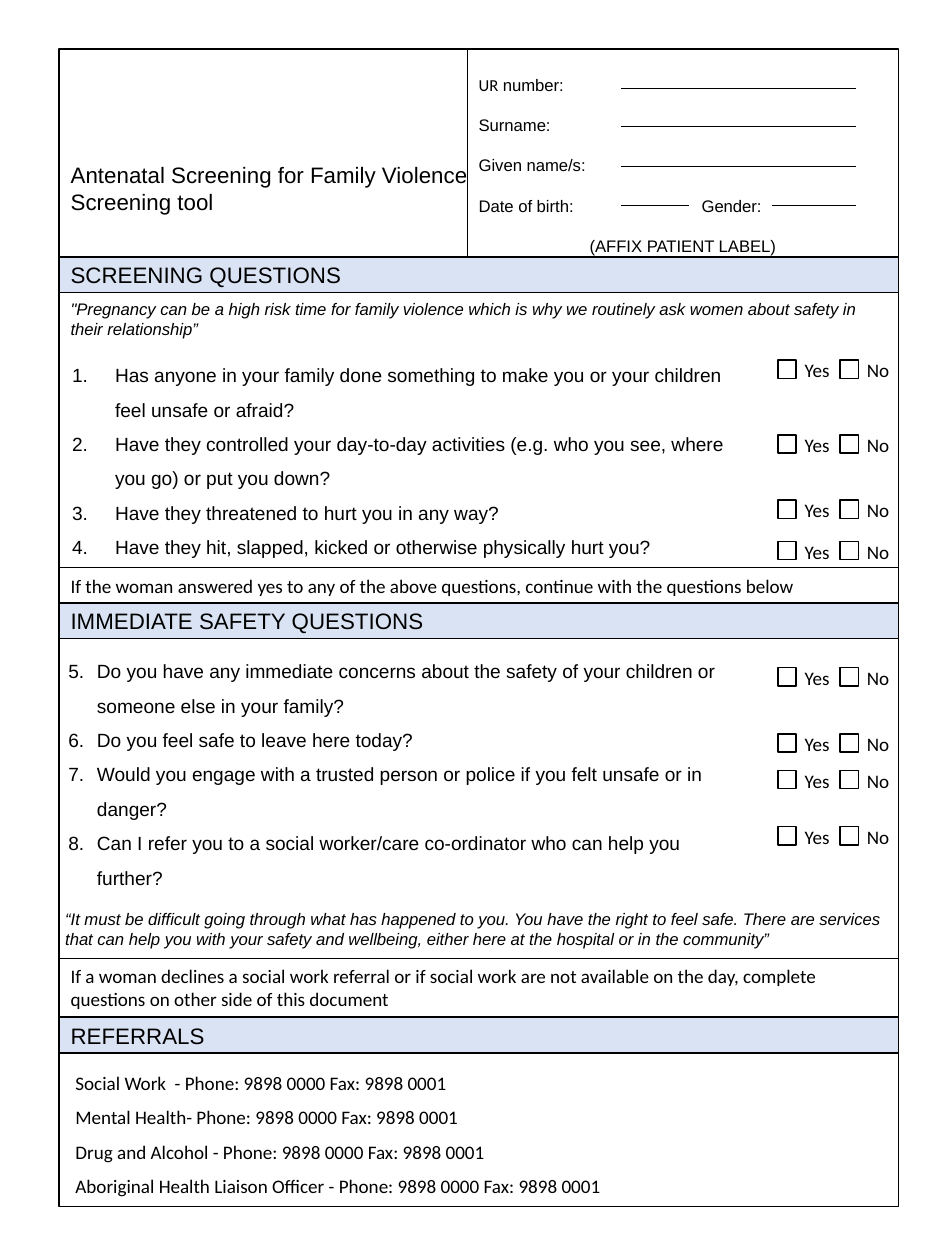
from lxml.etree import SubElement
from pptx import Presentation
from pptx.dml.color import RGBColor
from pptx.enum.shapes import MSO_CONNECTOR as Connector, MSO_SHAPE as Preset
from pptx.enum.text import MSO_ANCHOR as Anchor, MSO_AUTO_SIZE as AutoSize, PP_ALIGN as Align
from pptx.oxml.ns import qn
from pptx.util import Pt

BLACK, BAND_BLUE = "000000", "DAE3F3"
PAGE_WIDTH, PAGE_HEIGHT = 595.28, 790.87
FORM_LEFT, FORM_TOP, FORM_WIDTH, FORM_HEIGHT = 37.2, 30.96, 527.04, 726.4
BAND_HEIGHT = 22.32
BOX_SIZE, LABEL_OFFSET = 11.52, (9.7, -4.3)
ANSWER_COLUMNS = (("Yes", 488.5), ("No", 527.5))
ANSWER_ROWS = (226, 272.9, 313.9, 339.8, 419, 460.6, 483.6, 518.9)
LINE_LEFT, LINE_RIGHT = 390.24, 537.6
ANSWER_LINES = (
    (LINE_LEFT, LINE_RIGHT, 55.44),
    (LINE_LEFT, LINE_RIGHT, 79.2),
    (LINE_LEFT, LINE_RIGHT, 104.4),
    (LINE_LEFT, 432.5, 128.88),
    (484.56, LINE_RIGHT, 128.88),
)
GENDER_TAB = 140

TITLE = ["Antenatal Screening for Family Violence", "Screening tool"]
PATIENT_FIELDS = ["Surname:", "Given name/s:", "Date of birth:\tGender:", "(AFFIX PATIENT LABEL)"]
SCREENING_QUESTIONS = [
    "Has anyone in your family done something to make you or your children feel unsafe or afraid?",
    "Have they controlled your day-to-day activities (e.g. who you see, where you go) or put you down?",
    "Have they threatened to hurt you in any way?",
    "Have they hit, slapped, kicked or otherwise physically hurt you?",
]
SAFETY_QUESTIONS = [
    "Do you have any immediate concerns about the safety of your children or someone else in your family?",
    "Do you feel safe to leave here today?",
    "Would you engage with a trusted person or police if you felt unsafe or in danger?",
    "Can I refer you to a social worker/care co-ordinator who can help you further?",
]
SERVICES = ["Social Work  -", "Mental Health-", "Drug and Alcohol -", "Aboriginal Health Liaison Officer -"]
OPENING_QUOTE = (
    "\"Pregnancy can be a high risk time for family violence which is why we "
    "routinely ask women about safety in their relationship”"
)
CLOSING_QUOTE = (
    "“It must be difficult going through what has happened to you. You have the right to feel safe. "
    "There are services that can help you with your safety and wellbeing, either here at the hospital "
    "or in the community”"
)
CONTINUE_NOTE = "If the woman answered yes to any of the above questions, continue with the questions below"
DECLINE_NOTE = (
    "If a woman declines a social work referral or if social work are not available on the day, "
    "complete questions on other side of this document"
)


def colour(value):
    """Turn a hex string into a colour."""
    return RGBColor.from_string(value)


def set_page(presentation, width, height):
    """Give the presentation a custom page size."""
    presentation.slide_width, presentation.slide_height = Pt(width), Pt(height)
    presentation.element.find(qn("p:sldSz")).attrib.pop("type", None)


def place(shape, left, top, width, height):
    """Move and size a shape."""
    shape.left, shape.top, shape.width, shape.height = map(Pt, (left, top, width, height))


def style(paragraph, size, font="Arial", italic=False, spacing=1, align=Align.LEFT):
    """Format a whole paragraph."""
    paragraph.alignment, paragraph.line_spacing = align, spacing
    paragraph.space_before = Pt(0)
    paragraph.font.size, paragraph.font.name = Pt(size), font
    paragraph.font.italic = italic
    paragraph.font.color.rgb = colour(BLACK)


def write(shape, lines, size, anchor=Anchor.TOP, wrap=True, **formatting):
    """Write one formatted paragraph per line and return the paragraphs."""
    frame = shape.text_frame
    frame.text = "\n".join(lines)
    frame.word_wrap, frame.auto_size = wrap, AutoSize.NONE
    frame.vertical_anchor = anchor
    for paragraph in frame.paragraphs:
        style(paragraph, size, **formatting)
    return frame.paragraphs


def add_text(slide, bounds, lines, size, **formatting):
    """Add a text box."""
    return write(slide.shapes.add_textbox(*map(Pt, bounds)), lines, size, **formatting)


def add_box(slide, bounds, line_width=1, fill=None):
    """Add an outlined rectangle."""
    box = slide.shapes.add_shape(Preset.RECTANGLE, *map(Pt, bounds))
    box.shadow.inherit = False
    if fill:
        box.fill.solid()
        box.fill.fore_color.rgb = colour(fill)
    else:
        box.fill.background()
    box.line.color.rgb, box.line.width = colour(BLACK), Pt(line_width)
    return box


def add_band(slide, top, text, size=14, font="Arial", fill=BAND_BLUE):
    """Add a full-width row holding one line of text."""
    box = add_box(slide, (FORM_LEFT, top, FORM_WIDTH, BAND_HEIGHT), fill=fill)
    write(box, [text], size, anchor=Anchor.MIDDLE, font=font)


def add_answer_line(slide, left, right, y):
    """Add a thin line to write on."""
    line = slide.shapes.add_connector(Connector.STRAIGHT, Pt(left), Pt(y), Pt(right), Pt(y))
    line.line.color.rgb, line.line.width = colour(BLACK), Pt(0.5)
    SubElement(line._element.spPr, qn("a:effectLst"))


def add_patient_label(slide):
    """Add the patient details panel with its lines."""
    panel = add_box(slide, (293.5, FORM_TOP, 270.72, 130.32), line_width=0.75)
    paragraphs = write(panel, ["UR"] + PATIENT_FIELDS, 10.5, spacing=2)
    paragraphs[0].runs[0].font.name = "Calibri"
    paragraphs[0].add_run().text = " number:"
    birth = paragraphs[3]._p.get_or_add_pPr()
    tabs = birth.makeelement(qn("a:tabLst"))
    SubElement(tabs, qn("a:tab"), pos=str(Pt(GENDER_TAB)), algn="l")
    birth.find(qn("a:defRPr")).addprevious(tabs)
    paragraphs[-1].alignment = Align.CENTER
    for left, right, y in ANSWER_LINES:
        add_answer_line(slide, left, right, y)


def fill_questions(placeholder, bounds, questions, indent, start):
    """Fill a body placeholder with numbered questions."""
    place(placeholder, *bounds)
    placeholder.text_frame.text = "\n".join(questions)
    for paragraph in placeholder.text_frame.paragraphs:
        properties = paragraph._p.get_or_add_pPr()
        properties.set("marL", str(Pt(indent)))
        properties.set("indent", str(-Pt(indent)))
        SubElement(properties, qn("a:buFont"), typeface="+mj-lt")
        SubElement(properties, qn("a:buAutoNum"), type="arabicPeriod", startAt=str(start))
        style(paragraph, 12, spacing=1.5)
    placeholder.text_frame.auto_size = AutoSize.NONE
    placeholder.text_frame.vertical_anchor = Anchor.TOP


def add_answers(slide, top):
    """Add the Yes and No tick boxes of one question."""
    across, down = LABEL_OFFSET
    for label, left in ANSWER_COLUMNS:
        add_box(slide, (left, top, BOX_SIZE, BOX_SIZE))
        add_text(slide, (left + across, top + down, 34, 21.6), [label], 12, font="Calibri", wrap=False)


def main():
    """Build the screening form."""
    presentation = Presentation()
    set_page(presentation, PAGE_WIDTH, PAGE_HEIGHT)
    slide = presentation.slides.add_slide(presentation.slide_layouts[3])
    title, screening, safety = list(slide.placeholders)[:3]

    place(title, FORM_LEFT, 97.6, 263.52, 63.36)
    write(title, TITLE, 14)
    title.text_frame.margin_right = Pt(0)
    fill_questions(screening, (38, 217.44, 426.24, 135.36), SCREENING_QUESTIONS, 27, 1)
    fill_questions(safety, (35.7, 403.2, 440.64, 156.96), SAFETY_QUESTIONS, 18, 5)

    add_patient_label(slide)
    add_box(slide, (FORM_LEFT, FORM_TOP, FORM_WIDTH, FORM_HEIGHT))
    add_band(slide, 161.4, "SCREENING QUESTIONS")
    add_band(slide, 356.3, CONTINUE_NOTE, size=12, font="Calibri", fill=None)
    add_band(slide, 378.6, "IMMEDIATE SAFETY QUESTIONS")
    add_band(slide, 638.6, "REFERRALS")

    add_text(slide, (FORM_LEFT, 182.6, FORM_WIDTH, 35.28), [OPENING_QUOTE], 10.5,
             italic=True, anchor=Anchor.MIDDLE)
    add_text(slide, (33.84, 566.64, 533.52, 32.4), [CLOSING_QUOTE], 10.5, italic=True)
    decline_row = add_box(slide, (FORM_LEFT, 601.92, FORM_WIDTH, 36), line_width=0.75)
    write(decline_row, [DECLINE_NOTE], 12, font="Calibri")
    contacts = [f"{service} Phone: 9898 0000 Fax: 9898 0001" for service in SERVICES]
    add_text(slide, (40.32, 661.68, 506.16, 113.76), contacts, 12, font="Calibri", spacing=1.5)

    for top in ANSWER_ROWS:
        add_answers(slide, top)
    presentation.save("out.pptx")


if __name__ == "__main__":
    main()
